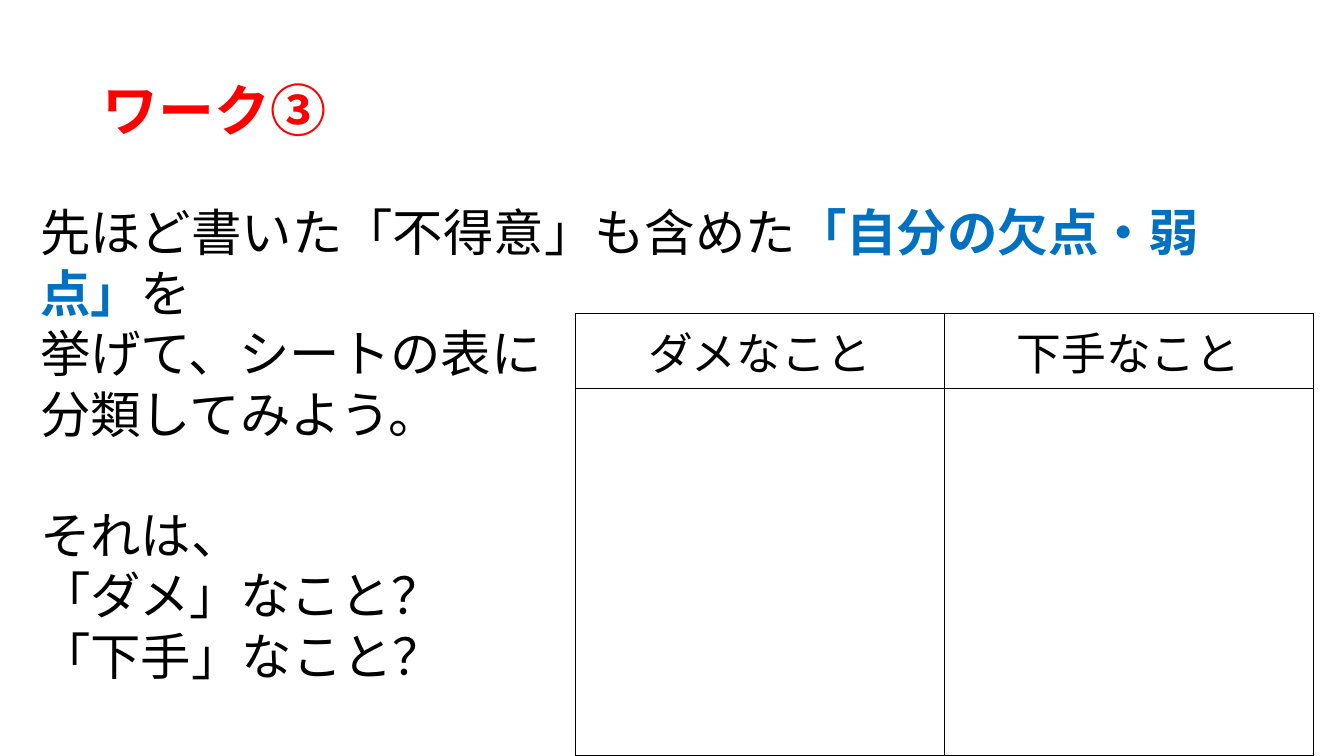
from lxml import etree
from pptx import Presentation
from pptx.dml.color import RGBColor
from pptx.enum.text import MSO_ANCHOR, MSO_AUTO_SIZE, PP_ALIGN
from pptx.oxml.ns import qn
from pptx.util import Pt

LEFT, CENTER = PP_ALIGN.LEFT, PP_ALIGN.CENTER
MIDDLE = MSO_ANCHOR.MIDDLE
NO_FIT, GROW = MSO_AUTO_SIZE.NONE, MSO_AUTO_SIZE.SHAPE_TO_FIT_TEXT
TITLE_ONLY = 5

BLACK = RGBColor(0x00, 0x00, 0x00)
WHITE = RGBColor(0xFF, 0xFF, 0xFF)
RED = RGBColor(0xFF, 0x00, 0x00)
BLUE = RGBColor(0x00, 0x70, 0xC0)

LINE_HEIGHT = 43.2
INSTRUCTIONS = [
    [("先ほど書いた「不得意」も含めた", BLACK, False),
     ("「自分の欠点・弱点」", BLUE, True),
     ("を", BLACK, False)],
    [("挙げて、シートの表に", BLACK, False)],
    [("分類してみよう。", BLACK, False)],
]
QUESTIONS = [
    [("それは、", BLACK, False)],
    [("「ダメ」なこと？", BLACK, False)],
    [("「下手」なこと？", BLACK, False)],
]
HEADINGS = ["ダメなこと", "下手なこと"]


class SlideBuilder:
    font_name = "Calibri"
    title_size, body_size, table_size = 40, 36, 32

    def __init__(self, slide):
        self.slide = slide

    def add_run(self, paragraph, text, size, color=BLACK, bold=False):
        run = paragraph.add_run()
        run.text = text
        run.font.name = self.font_name
        run.font.size = Pt(size)
        run.font.bold = bold
        run.font.color.rgb = color

    def title(self, text, left, top, width, height):
        shape = self.slide.shapes.title
        shape.left, shape.top = Pt(left), Pt(top)
        shape.width, shape.height = Pt(width), Pt(height)
        frame = shape.text_frame
        frame.auto_size = NO_FIT
        frame.vertical_anchor = MIDDLE
        paragraph = frame.paragraphs[0]
        paragraph.alignment = LEFT
        paragraph.line_spacing = 0.9
        self.add_run(paragraph, text, self.title_size, RED, True)

    def text_box(self, blocks, left, top, width, height):
        """Write blocks of paragraphs, with one line of space between blocks."""
        shape = self.slide.shapes.add_textbox(Pt(left), Pt(top), Pt(width), Pt(height))
        frame = shape.text_frame
        frame.word_wrap = True
        frame.auto_size = GROW
        paragraph = None
        for block in blocks:
            for index, runs in enumerate(block):
                starts_block = paragraph is not None and index == 0
                paragraph = frame.add_paragraph() if paragraph is not None else frame.paragraphs[0]
                if starts_block:
                    paragraph.space_before = Pt(LINE_HEIGHT)
                for text, color, bold in runs:
                    self.add_run(paragraph, text, self.body_size, color, bold)

    def border(self, cell):
        properties = cell._tc.get_or_add_tcPr()
        for side in ("lnL", "lnR", "lnT", "lnB"):
            line = etree.SubElement(properties, qn(f"a:{side}"), w=str(Pt(1)))
            fill = etree.SubElement(line, qn("a:solidFill"))
            etree.SubElement(fill, qn("a:srgbClr"), val=str(BLACK))

    def table(self, headings, row_heights, left, top, width):
        table = self.slide.shapes.add_table(
            len(row_heights), len(headings),
            Pt(left), Pt(top), Pt(width), Pt(sum(row_heights))).table
        for row, height in zip(table.rows, row_heights):
            row.height = Pt(height)
        for cell in table.iter_cells():
            self.border(cell)
            cell.fill.solid()
            cell.fill.fore_color.rgb = WHITE
        for column, heading in enumerate(headings):
            paragraph = table.cell(0, column).text_frame.paragraphs[0]
            paragraph.alignment = CENTER
            self.add_run(paragraph, heading, self.table_size)


def main():
    presentation = Presentation()
    presentation.slide_width, presentation.slide_height = Pt(960), Pt(540)
    slide = presentation.slides.add_slide(presentation.slide_layouts[TITLE_ONLY])
    builder = SlideBuilder(slide)
    builder.table(HEADINGS, [40.3, 262], 411, 224, 527)
    builder.text_box([INSTRUCTIONS, QUESTIONS], 21.6, 140.4, 865.4, 312.5)
    builder.title("ワーク③", 66, 28.75, 828, 104.4)
    presentation.save("out.pptx")


if __name__ == "__main__":
    main()
